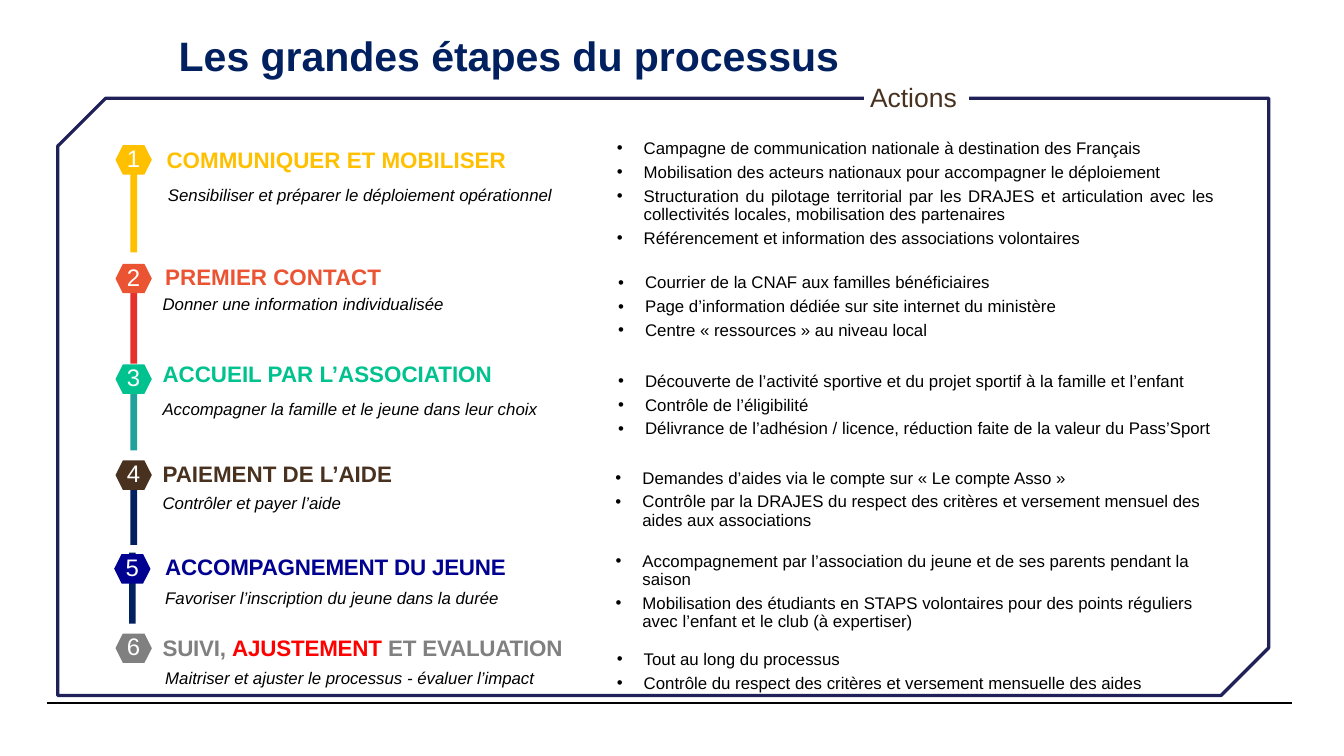
from dataclasses import dataclass

from lxml.etree import SubElement
from pptx import Presentation
from pptx.dml.color import RGBColor
from pptx.enum.shapes import MSO_CONNECTOR, MSO_SHAPE
from pptx.enum.text import MSO_ANCHOR, MSO_AUTO_SIZE, PP_ALIGN
from pptx.oxml.ns import qn
from pptx.util import Inches, Pt

WIDTH = Inches(10)
HEIGHT = WIDTH * 9 // 16
COLUMN, ROW = WIDTH / 100, HEIGHT / 100  # the grid has 100 columns and 100 rows
FONT = "Arial"
COLORS = {
    "white": "FFFFFF", "black": "000000", "navy": "002060", "frame": "21215A",
    "yellow": "FFC000", "orange": "EA5433", "red": "E6302C", "green": "00C28F",
    "teal": "1FA29A", "brown": "49311F", "blue": "000091", "grey": "808080",
    "bright_red": "FF0000",
}


@dataclass
class Step:
    box: tuple      # left, top, width, height of the step
    color: str
    bar: tuple      # colour, rows below the top, rows high
    heading: tuple  # columns and rows from the box corner
    summary: tuple
    actions: tuple  # columns and rows from the box corner, rows high
    title: list     # runs as (text, colour)
    subtitle: str
    items: list
    align: PP_ALIGN = PP_ALIGN.LEFT
    tracking: int = 0  # letter spacing of the heading, hundredths of a point


STEPS = [
    Step((8.6, 19.2, 81.7, 15.7), "yellow", ("yellow", 1.6, 12.6),
         (3.8, 0.9), (3.9, 5.5), (37.3, -0.7, 14.4),
         [("COMMUNIQUER ET MOBILISER", "yellow")],
         "Sensibiliser et préparer le déploiement opérationnel",
         ["Campagne de communication nationale à destination des Français",
          "Mobilisation des acteurs nationaux pour accompagner le déploiement",
          "Structuration du pilotage territorial par les DRAJES et articulation "
          "avec les collectivités locales, mobilisation des partenaires",
          "Référencement et information des associations volontaires"],
         align=PP_ALIGN.JUSTIFY),
    Step((8.6, 34.9, 81.8, 13.3), "orange", ("red", 3.6, 9.6),
         (3.7, 0.7), (3.5, 4.3), (37.4, 1.4, 8.7),
         [("PREMIER CONTACT", "orange")],
         "Donner une information individualisée",
         ["Courrier de la CNAF aux familles bénéficiaires",
          "Page d’information dédiée sur site internet du ministère",
          "Centre « ressources » au niveau local"]),
    Step((8.6, 48.2, 81.8, 12.7), "green", ("teal", 1.1, 10.3),
         (3.5, 0.2), (3.5, 4.8), (37.4, 1.1, 8.7),
         [("ACCUEIL PAR L’ASSOCIATION", "green")],
         "Accompagner la famille et le jeune dans leur choix",
         ["Découverte de l’activité sportive et du projet sportif à la famille "
          "et l’enfant",
          "Contrôle de l’éligibilité",
          "Délivrance de l’adhésion / licence, réduction faite de la valeur du "
          "Pass’Sport"]),
    Step((8.6, 60.9, 81.6, 12.4), "brown", ("navy", 1.4, 9.8),
         (3.5, 0.7), (3.5, 4.6), (37.2, 1.2, 8),
         [("PAIEMENT DE L’AIDE", "brown")],
         "Contrôler et payer l’aide",
         ["Demandes d’aides via le compte sur « Le compte Asso »",
          "Contrôle par la DRAJES du respect des critères et versement mensuel "
          "des aides aux associations"]),
    Step((8.5, 73.3, 82.2, 10.5), "blue", ("navy", -0.2, 9.4),
         (3.8, 0.7), (3.8, 4.8), (37.3, -0.2, 10.5),
         [("ACCOMPAGNEMENT DU JEUNE", "blue")],
         "Favoriser l’inscription du jeune dans la durée",
         ["Accompagnement par l’association du jeune et de ses parents pendant "
          "la saison",
          "Mobilisation des étudiants en STAPS volontaires pour des points "
          "réguliers avec l’enfant et le club (à expertiser)"],
         tracking=-10),
    Step((8.6, 83.8, 81.7, 7.8), "grey", None,
         (3.5, 0.9), (3.7, 4.8), (37.3, 2.3, 5.5),
         [("SUIVI, ", "grey"), ("AJUSTEMENT", "bright_red"),
          (" ET EVALUATION", "grey")],
         "Maitriser et ajuster le processus - évaluer l’impact",
         ["Tout au long du processus",
          "Contrôle du respect des critères et versement mensuelle des aides"],
         tracking=-10),
]


def rgb(name):
    return RGBColor.from_string(COLORS[name])


def grid(left, top, width, height):
    return (round(left * COLUMN), round(top * ROW),
            round(width * COLUMN), round(height * ROW))


def add_filled(slide, kind, box, color):
    shape = slide.shapes.add_shape(kind, *grid(*box))
    shape.shadow.inherit = False
    shape.fill.solid()
    shape.fill.fore_color.rgb = rgb(color)
    shape.line.fill.background()
    return shape


def add_run(paragraph, text, size, color, bold=False, italic=False, tracking=0):
    run = paragraph.add_run()
    run.text = text
    run.font.name, run.font.size = FONT, Pt(size)
    run.font.bold, run.font.italic = bold, italic
    run.font.color.rgb = rgb(color)
    if tracking:
        run._r.get_or_add_rPr().set("spc", str(tracking))


def prepare_frame(shape, anchor=MSO_ANCHOR.TOP, wrap=True):
    frame = shape.text_frame
    frame.margin_left = frame.margin_right = 0
    frame.margin_top = frame.margin_bottom = 0
    frame.vertical_anchor, frame.word_wrap = anchor, wrap
    if wrap:
        frame.auto_size = MSO_AUTO_SIZE.SHAPE_TO_FIT_TEXT
    return frame


def format_paragraph(paragraph, align=PP_ALIGN.LEFT, spacing=0.9):
    paragraph.alignment, paragraph.line_spacing = align, spacing
    return paragraph


def add_label(slide, box, runs, spacing, **style):
    frame = prepare_frame(slide.shapes.add_textbox(*grid(*box)))
    paragraph = format_paragraph(frame.paragraphs[0], spacing=spacing)
    for text, color in runs:
        add_run(paragraph, text, color=color, **style)


def add_actions(slide, box, items, align):
    shape = add_filled(slide, MSO_SHAPE.RECTANGLE, box, "white")
    frame = prepare_frame(shape)
    for index, item in enumerate(items):
        paragraph = frame.add_paragraph() if index else frame.paragraphs[0]
        properties = paragraph._p.get_or_add_pPr()
        properties.set("marL", str(Inches(0.2)))
        properties.set("indent", str(-Inches(0.2)))
        SubElement(properties, qn("a:buFont")).set("typeface", FONT)
        SubElement(properties, qn("a:buChar")).set("char", "•")
        format_paragraph(paragraph, align)
        paragraph.space_before = Pt(3 if index else 0)
        add_run(paragraph, item, 9, "black")


def add_step(slide, number, step):
    left, top, width, _ = step.box
    # Bar and numbered marker
    if step.bar:
        color, offset, height = step.bar
        add_filled(slide, MSO_SHAPE.RECTANGLE,
                   (left + 1.1, top + offset, 0.5, height), color)
    marker = add_filled(slide, MSO_SHAPE.HEXAGON, (left, top, 2.7, 3.9), step.color)
    frame = prepare_frame(marker, MSO_ANCHOR.MIDDLE, wrap=False)
    paragraph = format_paragraph(frame.paragraphs[0], PP_ALIGN.CENTER)
    add_run(paragraph, str(number), 12.8, "white")
    # Heading and summary
    across, down = step.heading
    add_label(slide, (left + across, top + down, 31, 2.7), step.title,
              Pt(11.2), size=12, bold=True, tracking=step.tracking)
    across, down = step.summary
    add_label(slide, (left + across, top + down, 31, 2.4),
              [(step.subtitle, "black")], 0.9, size=9, italic=True)
    # Actions
    across, down, height = step.actions
    add_actions(slide, (left + across, top + down, width - across, height),
                step.items, step.align)


def add_title(slide, box, text):
    title = slide.shapes.title
    title.left, title.top, title.width, title.height = grid(*box)
    frame = title.text_frame
    frame.vertical_anchor, frame.word_wrap = MSO_ANCHOR.MIDDLE, True
    paragraph = format_paragraph(frame.paragraphs[0])
    paragraph._p.get_or_add_pPr().set("marL", str(Inches(0.02)))
    add_run(paragraph, text, 22, "navy", bold=True)


def add_border(slide, box):
    left, top, width, height = grid(*box)
    # A quarter turn swaps the sides around the centre
    shift = (width - height) // 2
    border = slide.shapes.add_shape(MSO_SHAPE.SNIP_2_DIAG_RECTANGLE,
                                    left + shift, top - shift, height, width)
    border.rotation = 90
    border.adjustments[0], border.adjustments[1] = 0, 0.08
    border.shadow.inherit = False
    border.fill.background()
    border.line.color.rgb, border.line.width = rgb("frame"), Pt(1.75)
    # Column label set into the top edge
    label = add_filled(slide, MSO_SHAPE.RECTANGLE, (64.3, 11.2, 7.8, 3.9), "white")
    frame = prepare_frame(label)
    add_run(format_paragraph(frame.paragraphs[0]), " Actions", 14.2, "brown")


def add_footer_line(slide, left, right, row):
    x, y, width, _ = grid(left, row, right - left, 0)
    line = slide.shapes.add_connector(MSO_CONNECTOR.STRAIGHT, x, y, x + width, y)
    line.line.color.rgb, line.line.width = rgb("black"), Pt(0.8)
    SubElement(line._element.spPr, qn("a:effectLst"))


def main():
    presentation = Presentation()
    presentation.slide_width, presentation.slide_height = WIDTH, HEIGHT
    slide = presentation.slides.add_slide(presentation.slide_layouts[5])
    add_footer_line(slide, 3.5, 96.1, 93)
    add_title(slide, (12.1, 2.3, 79.9, 10.9), "Les grandes étapes du processus")
    add_border(slide, (4.3, 13, 90.1, 79))
    for number, step in enumerate(STEPS, start=1):
        add_step(slide, number, step)
    presentation.save("out.pptx")


if __name__ == "__main__":
    main()
